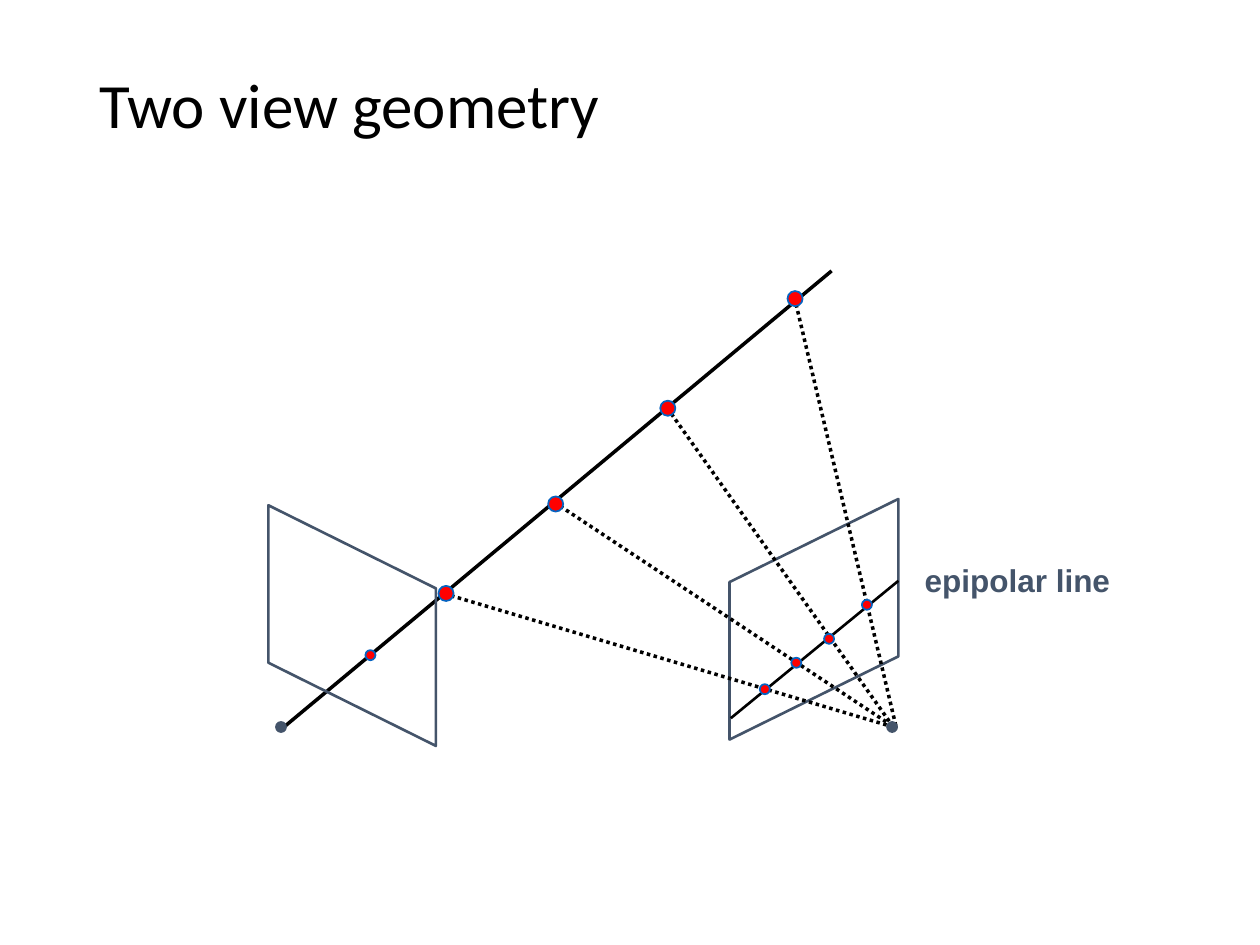
"""Builds a slide on two view geometry with its epipolar line."""
from pptx import Presentation
from pptx.dml.color import RGBColor
from pptx.enum import dml, shapes, text
from pptx.oxml.ns import qn
from pptx.util import Inches, Pt
from lxml import etree

BLACK = RGBColor(0x00, 0x00, 0x00)
SLATE = RGBColor(0x44, 0x54, 0x6A)
RED = RGBColor(0xFF, 0x00, 0x00)
BLUE = RGBColor(0x05, 0x63, 0xC1)

TITLE = "Two view geometry"
LABEL = "epipolar line"
VIEW_RAY = ((2.23, 5.79), (6.6, 2.15))
EPIPOLAR_LINE = ((5.8, 5.7), (7.13, 4.61))
PLANE_HEIGHT = 1.25
PLANE_TOPS = [((2.13, 4.01), (3.46, 4.67)), ((7.13, 3.96), (5.79, 4.62))]
CAMERAS = [(2.23, 5.77), (7.08, 5.77)]
SCENE_POINTS = [(3.54, 4.71), (4.41, 4.0), (5.3, 3.24), (6.31, 2.37)]
IMAGE_POINTS = [(2.94, 5.2), (6.07, 5.47), (6.32, 5.26), (6.58, 5.07), (6.88, 4.8)]
SIGHT_LINES = [
    ((7.09, 5.77), (3.52, 4.71)),
    ((7.08, 5.76), (4.39, 3.98)),
    ((7.09, 5.77), (5.29, 3.23)),
    ((7.11, 5.76), (6.31, 2.38)),
]


def add_line(s, ends, width, dash=None):
    (x1, y1), (x2, y2) = ends
    line = s.shapes.add_connector(shapes.MSO_CONNECTOR.STRAIGHT,
                                  Inches(x1), Inches(y1), Inches(x2), Inches(y2))
    line.line.color.rgb = BLACK
    line.line.width = Pt(width)
    if dash is not None:
        line.line.dash_style = dash
    etree.SubElement(line._element.spPr, qn("a:effectLst"))


def add_plane(s, top):
    (x1, y1), (x2, y2) = top
    corners = [(x1, y1 + PLANE_HEIGHT), (x2, y2 + PLANE_HEIGHT), (x2, y2)]
    builder = s.shapes.build_freeform(Inches(x1), Inches(y1))
    builder.add_line_segments([(Inches(x), Inches(y)) for x, y in corners], close=True)
    sp = builder.convert_to_shape()
    sp.shadow.inherit = False
    sp.fill.background()
    sp.line.color.rgb = SLATE
    sp.line.width = Pt(1.5)


def add_dot(s, center, size, fill, outline):
    x, y = center
    sp = s.shapes.add_shape(shapes.MSO_SHAPE.OVAL, Inches(x - size / 2),
                            Inches(y - size / 2), Inches(size), Inches(size))
    sp.shadow.inherit = False
    sp.fill.solid()
    sp.fill.fore_color.rgb = fill
    sp.line.color.rgb = outline
    sp.line.width = Pt(1)


def add_text(s, box, words, font, size, color, bold=False, wrap=True):
    tf = s.shapes.add_textbox(*[Inches(v) for v in box]).text_frame
    tf.word_wrap = wrap
    tf.vertical_anchor = text.MSO_ANCHOR.MIDDLE
    p = tf.paragraphs[0]
    r = p.add_run()
    r.text = words
    r.font.name = font
    r.font.size = Pt(size)
    r.font.color.rgb = color
    r.font.bold = bold
    return tf


def main():
    prs = Presentation()
    prs.slide_width, prs.slide_height = Inches(10), Inches(7.5)
    s = prs.slides.add_slide(prs.slide_layouts[6])

    title = add_text(s, (0.69, 0.41, 8.62, 0.9), TITLE, "Calibri", 36, BLACK)
    title.paragraphs[0].line_spacing = 0.9
    add_line(s, VIEW_RAY, 2)
    for top in PLANE_TOPS:
        add_plane(s, top)
    add_line(s, EPIPOLAR_LINE, 1.5)
    label = add_text(s, (7.24, 4.4, 1.67, 0.4), LABEL, "Arial", 18, SLATE, True, False)
    label.auto_size = text.MSO_AUTO_SIZE.SHAPE_TO_FIT_TEXT
    label.paragraphs[0].alignment = text.PP_ALIGN.CENTER
    for ends in SIGHT_LINES:
        add_line(s, ends, 2, dml.MSO_LINE.ROUND_DOT)
    for points, size, fill, outline in [
        (SCENE_POINTS, 0.12, RED, BLUE),
        (IMAGE_POINTS, 0.08, RED, BLUE),
        (CAMERAS, 0.08, SLATE, SLATE),
    ]:
        for center in points:
            add_dot(s, center, size, fill, outline)

    prs.save("out.pptx")


if __name__ == "__main__":
    main()
